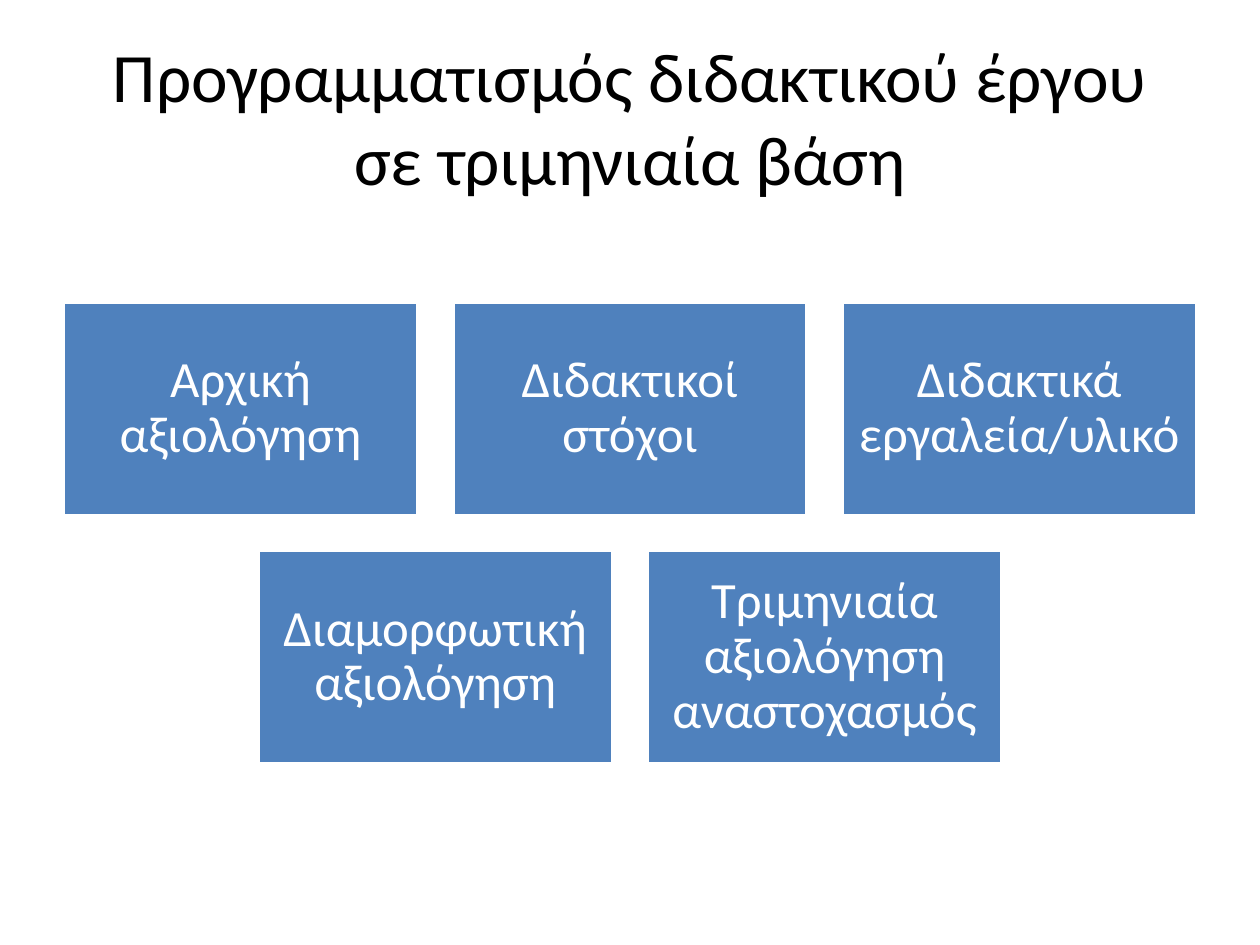
from pptx import Presentation
from pptx.dml.color import RGBColor
from pptx.enum.shapes import MSO_SHAPE
from pptx.enum.text import MSO_ANCHOR, PP_ALIGN
from pptx.util import Inches, Pt

RECTANGLE = MSO_SHAPE.RECTANGLE
MIDDLE = MSO_ANCHOR.MIDDLE
CENTER = PP_ALIGN.CENTER

TITLE = "Προγραμματισμός διδακτικού έργου σε τριμηνιαία βάση"
STEP_ROWS = [
    ["Αρχική αξιολόγηση", "Διδακτικοί στόχοι", "Διδακτικά εργαλεία/υλικό"],
    ["Διαμορφωτική αξιολόγηση", "Τριμηνιαία αξιολόγηση αναστοχασμός"],
]
COLORS = {"title": "000000", "box": "4F81BD", "light": "FFFFFF"}
FONT = "Calibri"

SLIDE_WIDTH, SLIDE_HEIGHT = 10, 7.5
BOX_WIDTH, BOX_HEIGHT = 2.81, 1.69
GAP = 0.28
ROWS_TOP = 2.4
BOX_INSET = 0.12


def color(name):
    return RGBColor.from_string(COLORS[name])


def write_centered(shape, text, size, color_name, line_spacing=1.0):
    frame = shape.text_frame
    frame.word_wrap = True
    frame.vertical_anchor = MIDDLE
    frame.text = text
    para = frame.paragraphs[0]
    para.alignment = CENTER
    para.line_spacing = line_spacing
    font = para.runs[0].font
    font.name = FONT
    font.size = Pt(size)
    font.color.rgb = color(color_name)


def add_step(slide, text, left, top):
    box = slide.shapes.add_shape(
        RECTANGLE, Inches(left), Inches(top), Inches(BOX_WIDTH), Inches(BOX_HEIGHT)
    )
    box.shadow.inherit = False
    box.fill.solid()
    box.fill.fore_color.rgb = color("box")
    box.line.color.rgb = color("light")
    box.line.width = Pt(2)
    frame = box.text_frame
    frame.margin_left = frame.margin_right = Inches(BOX_INSET)
    frame.margin_top = frame.margin_bottom = Inches(BOX_INSET)
    write_centered(box, text, 29, "light", line_spacing=0.9)


def main():
    deck = Presentation()
    deck.slide_width, deck.slide_height = Inches(SLIDE_WIDTH), Inches(SLIDE_HEIGHT)
    slide = deck.slides.add_slide(deck.slide_layouts[6])

    title = slide.shapes.add_textbox(Inches(0.5), Inches(0.3), Inches(9), Inches(1.25))
    write_centered(title, TITLE, 39.6, "title")

    for row, steps in enumerate(STEP_ROWS):
        row_width = len(steps) * (BOX_WIDTH + GAP) - GAP
        row_left = (SLIDE_WIDTH - row_width) / 2
        top = ROWS_TOP + row * (BOX_HEIGHT + GAP)
        for column, text in enumerate(steps):
            add_step(slide, text, row_left + column * (BOX_WIDTH + GAP), top)

    deck.save("out.pptx")


if __name__ == "__main__":
    main()
